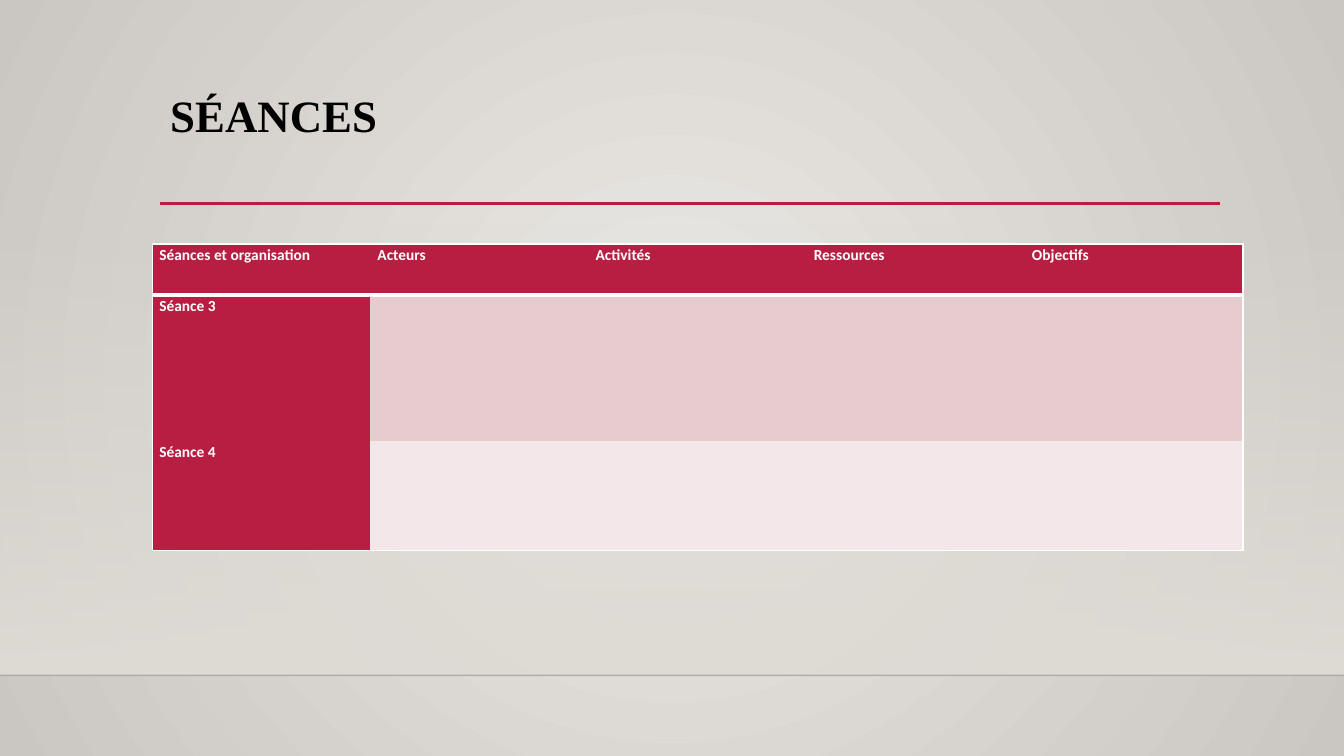
"""Build the SÉANCES slide: a title, two rules and a planning table."""
from dataclasses import dataclass

from lxml.etree import SubElement
from pptx import Presentation
from pptx.dml.color import RGBColor
from pptx.dml.fill import FillFormat
from pptx.enum.shapes import MSO_CONNECTOR, MSO_SHAPE
from pptx.enum.text import MSO_ANCHOR
from pptx.oxml import parse_xml
from pptx.oxml.ns import nsdecls, qn
from pptx.slide import Slide
from pptx.table import _Cell
from pptx.text.text import TextFrame
from pptx.util import Inches, Pt

COLORS = {
    "glow": "ECEAE7",
    "edge": "CAC6C1",
    "wall": "DFDBD5",
    "floor_line": "000001",
    "crimson": "B71E42",
    "rose": "E6CCCF",
    "blush": "F3E7E9",
    "white": "FFFFFF",
    "black": "000000",
}
SLIDE_WIDTH, SLIDE_HEIGHT = 13.33, 7.5
FLOOR_TOP = 6.7
TABLE_LEFT, TABLE_TOP, TABLE_WIDTH = 1.51, 2.42, 10.82
HEADERS = ["Séances et organisation", "Acteurs", "Activités", "Ressources", "Objectifs"]
NO_GRID_STYLE = "{2D5ABB26-0587-4C30-8999-92F81FD0307C}"


@dataclass(frozen=True)
class Rule:
    left: float
    right: float
    top: float
    color: str
    weight: float
    opacity: int = 100


@dataclass(frozen=True)
class Row:
    height: float
    texts: list[str]
    body_color: str


RULES = [
    Rule(0, SLIDE_WIDTH, FLOOR_TOP, "floor_line", 1, opacity=20),
    Rule(1.59, 12.1, 2.02, "crimson", 2.5),
]
ROWS = [
    Row(0.51, HEADERS, "crimson"),
    Row(1.45, ["Séance 3"], "rose"),
    Row(1.08, ["Séance 4"], "blush"),
]


def rgb(name: str) -> RGBColor:
    return RGBColor.from_string(COLORS[name])


def set_opacity(color_element, percent: int) -> None:
    SubElement(color_element, qn("a:alpha"), val=str(percent * 1000))


def set_gradient(fill: FillFormat, names: list[str]) -> None:
    fill.gradient()
    for stop, name, position in zip(fill.gradient_stops, names, (0, 1)):
        stop.color.rgb = rgb(name)
        stop.position = position


def write_text(frame: TextFrame, text: str, *, font: str, size: float, color: str,
               line_spacing: float, space_after: float = 0) -> None:
    paragraph = frame.paragraphs[0]
    paragraph.line_spacing = line_spacing
    paragraph.space_after = Pt(space_after)
    run = paragraph.add_run()
    run.text = text
    run.font.name = font
    run.font.size = Pt(size)
    run.font.bold = True
    run.font.color.rgb = rgb(color)


def draw_backdrop(slide: Slide) -> None:
    set_gradient(slide.background.fill, ["glow", "edge"])
    gradient = next(slide.element.iter(qn("a:gradFill")))
    gradient.replace(gradient.find(qn("a:lin")), parse_xml(
        f'<a:path {nsdecls("a")} path="circle">'
        '<a:fillToRect l="50000" t="50000" r="50000" b="50000"/></a:path>'))

    wall_top = 2.21
    wall = slide.shapes.add_shape(
        MSO_SHAPE.RECTANGLE, 0, Inches(wall_top), Inches(SLIDE_WIDTH),
        Inches(FLOOR_TOP - wall_top))
    wall.shadow.inherit = False
    wall.line.fill.background()
    set_gradient(wall.fill, ["wall", "wall"])
    wall.fill.gradient_angle = 270
    set_opacity(next(wall.element.iter(qn("a:srgbClr"))), 0)


def draw_rule(slide: Slide, rule: Rule) -> None:
    connector = slide.shapes.add_connector(
        MSO_CONNECTOR.STRAIGHT, Inches(rule.left), Inches(rule.top),
        Inches(rule.right), Inches(rule.top))
    connector.line.color.rgb = rgb(rule.color)
    connector.line.width = Pt(rule.weight)
    if rule.opacity < 100:
        set_opacity(next(connector.element.iter(qn("a:srgbClr"))), rule.opacity)
    SubElement(connector.element.spPr, qn("a:effectLst"))


def draw_title(slide: Slide) -> None:
    title = slide.shapes.add_textbox(Inches(1.59), Inches(0.88), Inches(10.5), Inches(1.15))
    title.text_frame.word_wrap = True
    title.text_frame.vertical_anchor = MSO_ANCHOR.TOP
    write_text(title.text_frame, "SÉANCES", font="Times New Roman", size=32,
               color="black", line_spacing=0.9)


def set_borders(cell: _Cell, weights: dict[str, float]) -> None:
    properties = cell._tc.get_or_add_tcPr()
    for index, side in enumerate("LRTB"):
        weight = weights.get(side, 0)
        paint = (f'<a:solidFill><a:srgbClr val="{COLORS["white"]}"/></a:solidFill>'
                 if weight else "<a:noFill/>")
        properties.insert(index, parse_xml(
            f'<a:ln{side} {nsdecls("a")} w="{Pt(weight)}">{paint}</a:ln{side}>'))


def draw_table(slide: Slide) -> None:
    frame = slide.shapes.add_table(
        len(ROWS), len(HEADERS), Inches(TABLE_LEFT), Inches(TABLE_TOP),
        Inches(TABLE_WIDTH), Inches(sum(row.height for row in ROWS)))
    table = frame.table
    table.horz_banding = False
    next(frame.element.iter(qn("a:tableStyleId"))).text = NO_GRID_STYLE
    last_row, last_column = len(ROWS) - 1, len(HEADERS) - 1
    for column in table.columns:
        column.width = Inches(TABLE_WIDTH / len(HEADERS))
    for row_index, row in enumerate(ROWS):
        table.rows[row_index].height = Inches(row.height)
        for column_index in range(len(HEADERS)):
            cell = table.cell(row_index, column_index)
            cell.margin_left = cell.margin_right = Inches(0.07)
            cell.margin_top = cell.margin_bottom = 0
            cell.fill.solid()
            cell.fill.fore_color.rgb = rgb(row.body_color if column_index else "crimson")
            set_borders(cell, {
                "L": 1 if column_index == 0 else 0,
                "R": 1 if column_index == last_column else 0,
                "T": {0: 1, 1: 3}.get(row_index, 0),
                "B": {0: 3, last_row: 1}.get(row_index, 0),
            })
        for column_index, text in enumerate(row.texts):
            write_text(table.cell(row_index, column_index).text_frame, text, font="Calibri",
                       size=11, color="white", line_spacing=1.07, space_after=8)


def main() -> None:
    presentation = Presentation()
    presentation.slide_width = Inches(SLIDE_WIDTH)
    presentation.slide_height = Inches(SLIDE_HEIGHT)
    slide = presentation.slides.add_slide(presentation.slide_layouts[6])
    draw_backdrop(slide)
    for rule in RULES:
        draw_rule(slide, rule)
    draw_title(slide)
    draw_table(slide)
    presentation.save("out.pptx")


if __name__ == "__main__":
    main()
